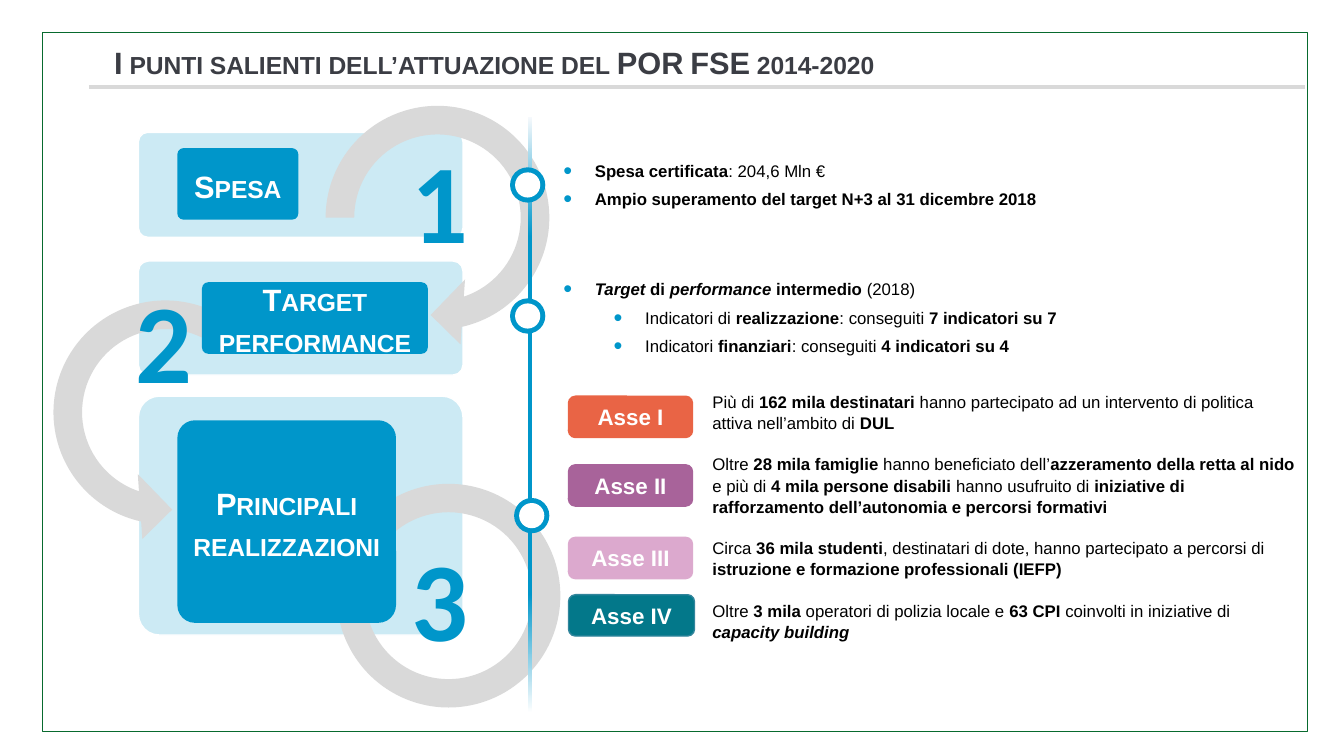
from lxml import etree
from pptx import Presentation
from pptx import util as u
from pptx.dml import color
from pptx.enum import shapes, text
from pptx.oxml import ns

RGB = color.RGBColor
BLUE = RGB(0x00, 0x96, 0xCA)
GRAY = RGB(0xD9, 0xD9, 0xD9)
GREEN = RGB(0x08, 0x6A, 0x2E)
DARK = RGB(0x3B, 0x3D, 0x44)
WHITE = RGB(0xFF, 0xFF, 0xFF)
BLACK = RGB(0x00, 0x00, 0x00)
RED = RGB(0xE9, 0x64, 0x45)
PLUM = RGB(0xA8, 0x63, 0x9A)
PINK = RGB(0xDC, 0xA9, 0xCE)
ROSE = RGB(0xDC, 0xAA, 0xCE)
TEAL = RGB(0x03, 0x78, 0x8A)
CYAN = RGB(0x31, 0x85, 0x9C)

KIND = shapes.MSO_SHAPE
MID = text.PP_ALIGN.CENTER
STOPS = (0, "F6F9FC"), (20, BLUE), (80, BLUE), (100, WHITE)


def node(parent, tag, **attrs):
    item = etree.SubElement(parent, ns.qn(tag))
    for key, val in attrs.items():
        item.set(key, str(val))
    return item


class Deck:
    HEAD = {"name": "Arial", "size": u.Pt(22), "bold": True}
    BODY = {"name": "Arial", "size": u.Pt(12)}
    TAG = {"name": "Arial", "size": u.Pt(16), "bold": True}
    DIGIT = {"name": "Calibri", "size": u.Pt(80), "bold": True}

    def __init__(self):
        self.prs = Presentation()
        self.prs.slide_width, self.prs.slide_height = u.Pt(960), u.Pt(540)
        self.slide = self.prs.slides.add_slide(self.prs.slide_layouts[6])
        self.tree = self.slide.shapes

    def shape(self, kind, box, fill=None, line=None, width=1, adj=(), alpha=None):
        item = self.tree.add_shape(kind, *map(u.Pt, box))
        item.shadow.inherit = False
        for i, val in enumerate(adj):
            item.adjustments[i] = val
        if fill is None:
            item.fill.background()
        else:
            item.fill.solid()
            item.fill.fore_color.rgb = fill
        if alpha:
            clr = item._element.spPr.find(".//" + ns.qn("a:srgbClr"))
            node(clr, "a:alpha", val=alpha * 1000)
        if line is None:
            item.line.fill.background()
        else:
            item.line.color.rgb = line
            item.line.width = u.Pt(width)
        return item

    def rule(self, x1, x2, y, tint, width):
        item = self.tree.add_connector(shapes.MSO_CONNECTOR.STRAIGHT, *map(u.Pt, (x1, y, x2, y)))
        item.line.color.rgb = tint
        item.line.width = u.Pt(width)
        node(item._element.spPr, "a:effectLst")

    def words(self, item, lines, style, tint, inset=None, small=False, dots=False, **form):
        frame = item.text_frame
        frame.word_wrap = True
        frame.vertical_anchor = text.MSO_ANCHOR.MIDDLE
        if inset is not None:
            for side in ("left", "top", "right", "bottom"):
                setattr(frame, "margin_" + side, u.Pt(inset))
        for i, line in enumerate(lines):
            para = frame.paragraphs[0] if i == 0 else frame.add_paragraph()
            for key, val in form.items():
                if i or key != "space_before":
                    setattr(para, key, val)
            if dots:
                self.bullet(para, line.startswith("Indicatori"))
            self.runs(para, line, style, tint, small)

    def bullet(self, para, level):
        para.level = int(level)
        prop = para._p.get_or_add_pPr()
        prop.set("marL", str(u.Pt(58.5 if level else 22.5)))
        prop.set("indent", str(u.Pt(-22.5)))
        node(node(prop, "a:buClr"), "a:srgbClr", val=BLUE)
        node(prop, "a:buSzPct", val=150000)
        node(prop, "a:buFont", typeface="Arial")
        node(prop, "a:buChar", char="•")

    def runs(self, para, line, style, tint, small):
        for i, chunk in enumerate(line.split("*")):
            for j, part in enumerate(chunk.split("_")):
                if not part:
                    continue
                run = para.add_run()
                run.text = part
                look = {"bold": i % 2 == 1, "italic": j % 2 == 1, **style}
                for key, val in look.items():
                    setattr(run.font, key, val)
                run.font.color.rgb = tint
                if small:
                    run._r.get_or_add_rPr().set("cap", "small")

    def note(self, box, lines, style, tint, **form):
        self.words(self.tree.add_textbox(*map(u.Pt, box)), lines, style, tint, **form)

    def label(self, box, line):
        item = self.shape(KIND.ROUNDED_RECTANGLE, box, BLUE, adj=[0.087])
        self.words(item, [line], self.HEAD, WHITE, small=True, alignment=MID, line_spacing=1.1)

    def digit(self, box, mark):
        self.note(box, [mark], self.DIGIT, BLUE, alignment=MID)

    def axis(self, box):
        item = self.shape(KIND.RECTANGLE, box, BLUE)
        prop = item._element.spPr
        grad = etree.Element(ns.qn("a:gradFill"), rotWithShape="1")
        stops = node(grad, "a:gsLst")
        for pos, tint in STOPS:
            node(node(stops, "a:gs", pos=pos * 1000), "a:srgbClr", val=tint)
        node(grad, "a:lin", ang=5400000, scaled=0)
        prop.replace(prop.find(ns.qn("a:solidFill")), grad)

    def ring(self, x, y):
        outer = self.shape(KIND.OVAL, (x, y, 25.2, 25.2), BLUE)
        inner = self.shape(KIND.OVAL, (x + 3.6, y + 3.6, 18, 18), WHITE)
        self.tree.add_group_shape([outer, inner])

    def tag(self, box, line, fill, edge):
        item = self.shape(KIND.ROUNDED_RECTANGLE, box, fill, edge)
        self.words(item, [line], self.TAG, WHITE, inset=3.6, alignment=MID)


def main():
    deck = Deck()
    deck.rule(63.5, 932.5, 62, GRAY, 3)
    deck.shape(KIND.RECTANGLE, (30.3, 23, 903.6, 499.2), line=GREEN, width=0.5)
    deck.note((81.6, 31, 851.8, 26.6), ["I punti salienti dell’attuazione del POR FSE 2014-2020"],
              deck.HEAD, DARK, inset=0, small=True)

    for top, high in (283, 170.6), (186.5, 81.4), (94.6, 74.9):
        deck.shape(KIND.ROUNDED_RECTANGLE, (98.9, top, 231.8, high), BLUE, WHITE,
                   adj=[0.087], alpha=20)
    deck.digit((283.7, 110.2, 60.5, 64), "1")
    deck.digit((275.8, 393.8, 76.3, 64.8), "3")
    deck.shape(KIND.CIRCULAR_ARROW, (219.6, 62.6, 185.8, 185.8), GRAY,
               adj=[0.11, 11.423, 45, 108, 0.125])
    deck.shape(KIND.LEFT_CIRCULAR_ARROW, (25.2, 201.6, 185.8, 185.8), GRAY,
               adj=[0.11, 11.423, 63, 189, 0.125])
    deck.digit((79.2, 209.5, 76.3, 64.8), "2")
    deck.shape(KIND.BLOCK_ARC, (240.5, 345.6, 159.8, 159.8), GRAY, adj=[135, 108, 0.127])
    deck.label((144.3, 201.6, 161.3, 51.1), "Target performance")
    deck.label((126.7, 105.8, 86.4, 51.1), "Spesa")
    deck.label((126.7, 300.2, 156.2, 144.7), "Principali realizzazioni")

    deck.note((501.8, 260, 432, 217.4), [
        "Più di *162 mila destinatari *hanno partecipato ad un intervento di politica "
        "attiva nell’ambito di *DUL*",
        "Oltre *28 mila famiglie *hanno beneficiato dell’*azzeramento della retta al nido *"
        "e più di *4 mila persone disabili *hanno usufruito di *iniziative di "
        "rafforzamento dell’autonomia e percorsi formativi*",
        "Circa *36 mila studenti*, destinatari di dote, hanno partecipato a percorsi di "
        "*istruzione e formazione professionali (IEFP)*",
        "Oltre* 3 mila *operatori di polizia locale e *63 CPI* coinvolti in iniziative di "
        "*_capacity building_*",
    ], deck.BODY, BLACK, line_spacing=1.05, space_before=u.Pt(14.4))
    deck.note((395.3, 102.2, 538.6, 59.8), [
        "*Spesa certificata*: 204,6 Mln €",
        "*Ampio superamento del target N+3 al 31 dicembre 2018*",
    ], deck.BODY, BLACK, dots=True, space_after=u.Pt(6))
    deck.note((395.3, 187.2, 538.6, 79.2), [
        "*_Target_ di _performance_ intermedio *(2018)",
        "Indicatori di *realizzazione*: conseguiti *7 indicatori su 7*",
        "Indicatori *finanziari*: conseguiti *4 indicatori su 4*",
    ], deck.BODY, BLACK, dots=True, space_after=u.Pt(6))

    deck.axis((377, 83.9, 2.9, 425.5))
    for x, y in (364.3, 119.5), (364.3, 213.1), (367.2, 355.7):
        deck.ring(x, y)
    for line, top, wide, fill, edge in (
        ("Asse I", 283, 88.6, RED, RED),
        ("Asse II", 332, 88.6, PLUM, PLUM),
        ("Asse III", 383.8, 88.6, PINK, ROSE),
        ("Asse IV", 424.8, 90, TEAL, CYAN),
    ):
        deck.tag((406.1, top, wide, 29.5), line, fill, edge)
    deck.prs.save("out.pptx")


if __name__ == "__main__":
    main()
